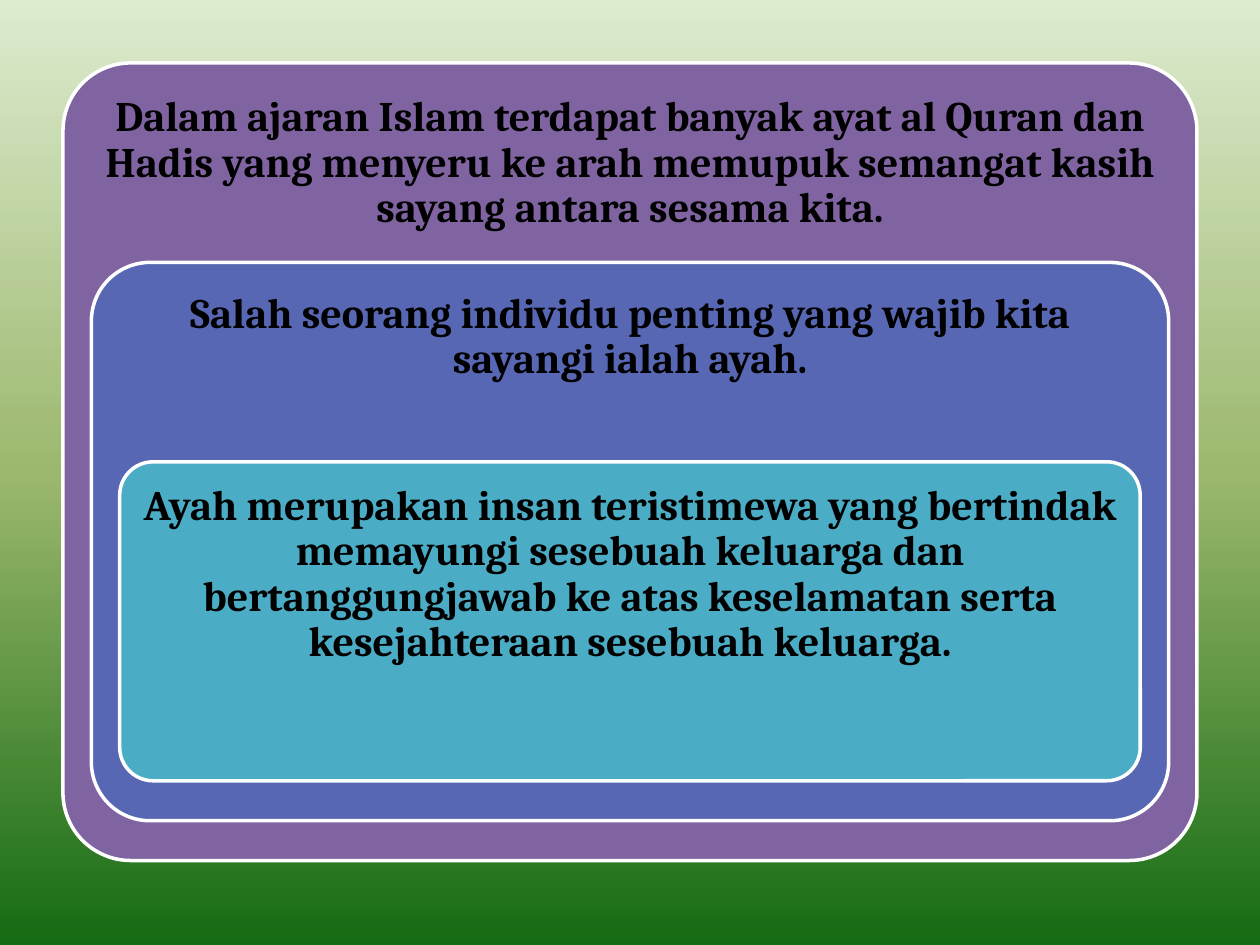
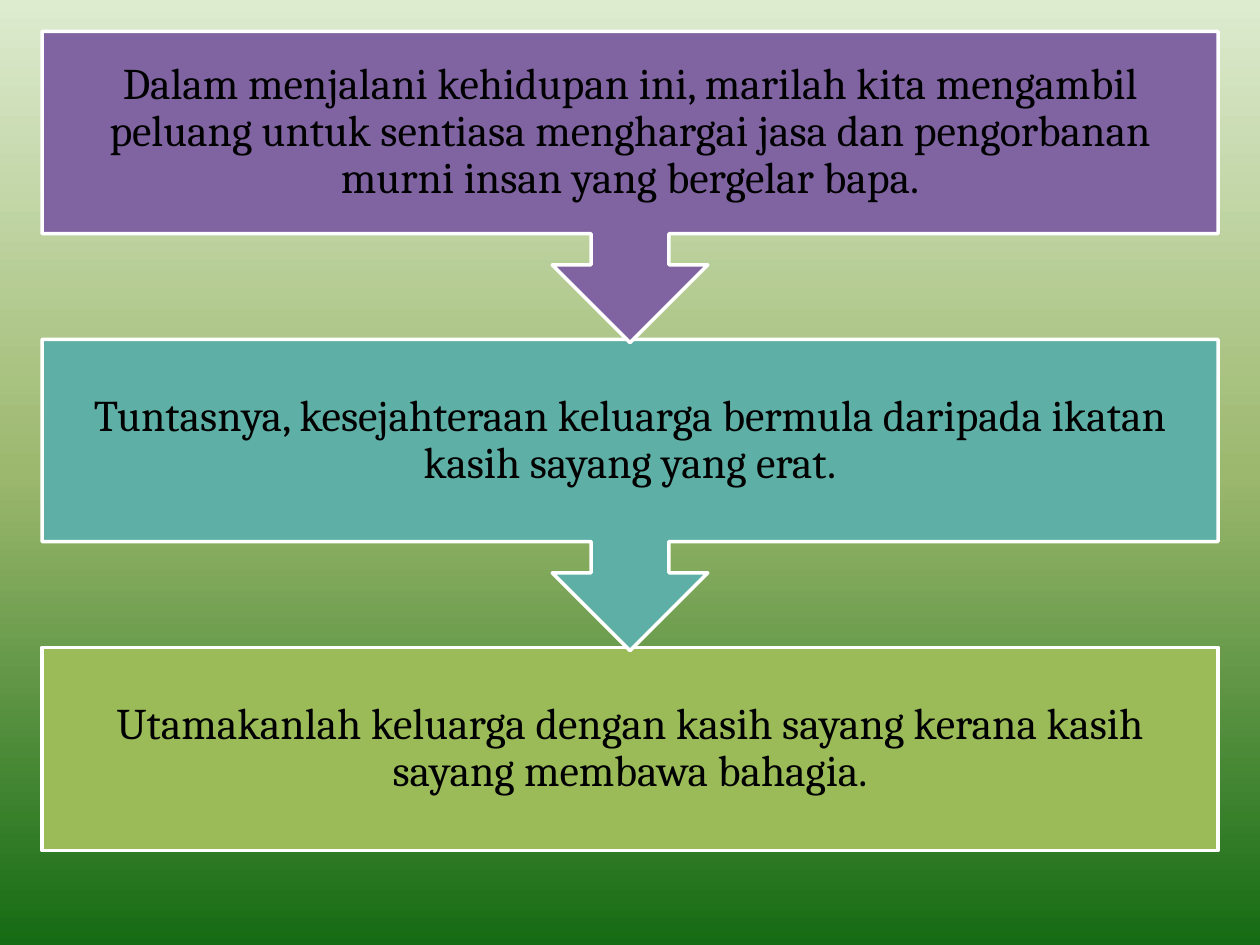
import copy

import pptx
import pptx.util
from pptx.dml.color import RGBColor
from pptx.enum.shapes import MSO_SHAPE
from pptx.enum.text import MSO_ANCHOR, PP_ALIGN

COLORS = {
    "sky": "DDEBCF", "meadow": "9CB86E", "forest": "156B13",
    "purple": "8064A2", "indigo": "5767B4", "aqua": "4BACC6",
    "teal": "5EAFA6", "lime": "9BBB59",
    "outline": "FFFFFF", "text": "000000",
}
FONT = "Cambria"
SLIDE_WIDTH, SLIDE_HEIGHT = 10, 7.5

# Left, top, width and height in inches
NEST_AREA = (0.05 * SLIDE_WIDTH, 0.5, 0.9 * SLIDE_WIDTH, 6.33)
STEPS_AREA = (SLIDE_WIDTH / 30, 0.25, SLIDE_WIDTH * 28 / 30, 6.5)

# Text, fill, corner rounding
NEST_LEVELS = [
    ("Dalam ajaran Islam terdapat banyak ayat al Quran dan Hadis yang menyeru "
     "ke arah memupuk semangat kasih sayang antara sesama kita.", "purple", 0.085),
    ("Salah seorang individu penting yang wajib kita sayangi ialah ayah.",
     "indigo", 0.105),
    ("Ayah merupakan insan teristimewa yang bertindak memayungi sesebuah "
     "keluarga dan bertanggungjawab ke atas keselamatan serta kesejahteraan "
     "sesebuah keluarga.", "aqua", 0.105),
]
STEPS = [
    ("Dalam menjalani kehidupan ini, marilah kita mengambil peluang untuk "
     "sentiasa menghargai jasa dan pengorbanan murni insan yang bergelar bapa.",
     "purple"),
    ("Tuntasnya, kesejahteraan keluarga bermula daripada ikatan kasih sayang "
     "yang erat.", "teal"),
    ("Utamakanlah keluarga dengan kasih sayang kerana kasih sayang membawa "
     "bahagia.", "lime"),
]


def rgb(name):
    return RGBColor.from_string(COLORS[name])


def paint_background(master):
    fill = master.background.fill
    fill.gradient()
    fill.gradient_angle = 270
    stop_list = master.element.xpath(".//p:bg//a:gsLst")[0]
    stop_list.append(copy.deepcopy(stop_list[-1]))
    shades = ("sky", "meadow", "forest")
    for stop, shade, position in zip(fill.gradient_stops, shades, (0, 0.5, 1)):
        stop.color.rgb = rgb(shade)
        stop.position = position


def add_panel(slide, kind, box, color, text, size, inset, anchor, bold=False):
    """Add an outlined shape holding one centred paragraph."""
    panel = slide.shapes.add_shape(kind, *map(pptx.util.Inches, box))
    panel.shadow.inherit = False
    panel.fill.solid()
    panel.fill.fore_color.rgb = rgb(color)
    panel.line.color.rgb = rgb("outline")
    panel.line.width = pptx.util.Pt(2)

    frame = panel.text_frame
    frame.word_wrap = True
    frame.vertical_anchor = anchor
    frame.margin_left = frame.margin_right = pptx.util.Inches(inset)
    frame.margin_top = frame.margin_bottom = pptx.util.Inches(inset)

    paragraph = frame.paragraphs[0]
    paragraph.text = text
    paragraph.alignment = PP_ALIGN.CENTER
    paragraph.line_spacing = 0.9
    paragraph.font.name = FONT
    paragraph.font.size = pptx.util.Pt(size)
    paragraph.font.bold = bold
    paragraph.font.color.rgb = rgb("text")
    return panel


def build_nest(slide, area):
    """Stack panels inside one another, each lower and narrower than the last."""
    left, top, width, height = area
    for depth, (text, color, rounding) in enumerate(NEST_LEVELS):
        side = 0.025 * depth * width
        box = (left + side, top + 0.25 * depth * height,
               width - 2 * side, (1 - 0.3 * depth) * height)
        panel = add_panel(slide, MSO_SHAPE.ROUNDED_RECTANGLE, box, color, text,
                          24, 0.1, MSO_ANCHOR.TOP, bold=True)
        panel.adjustments[0] = rounding


def build_steps(slide, area):
    """Run steps downwards, drawn from the last so that arrows overlap the next."""
    left, top, width, height = area
    pitch, arrow_height, last_height = 0.376 * height, 0.38 * height, 0.248 * height
    last = len(STEPS) - 1
    for row in range(last, -1, -1):
        text, color = STEPS[row]
        if row == last:
            kind, step_height = MSO_SHAPE.RECTANGLE, last_height
        else:
            kind, step_height = MSO_SHAPE.DOWN_ARROW_CALLOUT, arrow_height
        box = (left, top + row * pitch, width, step_height)
        add_panel(slide, kind, box, color, text, 25, 0.19, MSO_ANCHOR.MIDDLE)


def main():
    deck = pptx.Presentation()
    deck.slide_width = pptx.util.Inches(SLIDE_WIDTH)
    deck.slide_height = pptx.util.Inches(SLIDE_HEIGHT)
    paint_background(deck.slide_master)
    blank = deck.slide_layouts[6]
    build_nest(deck.slides.add_slide(blank), NEST_AREA)
    build_steps(deck.slides.add_slide(blank), STEPS_AREA)
    deck.save("out.pptx")


if __name__ == "__main__":
    main()
